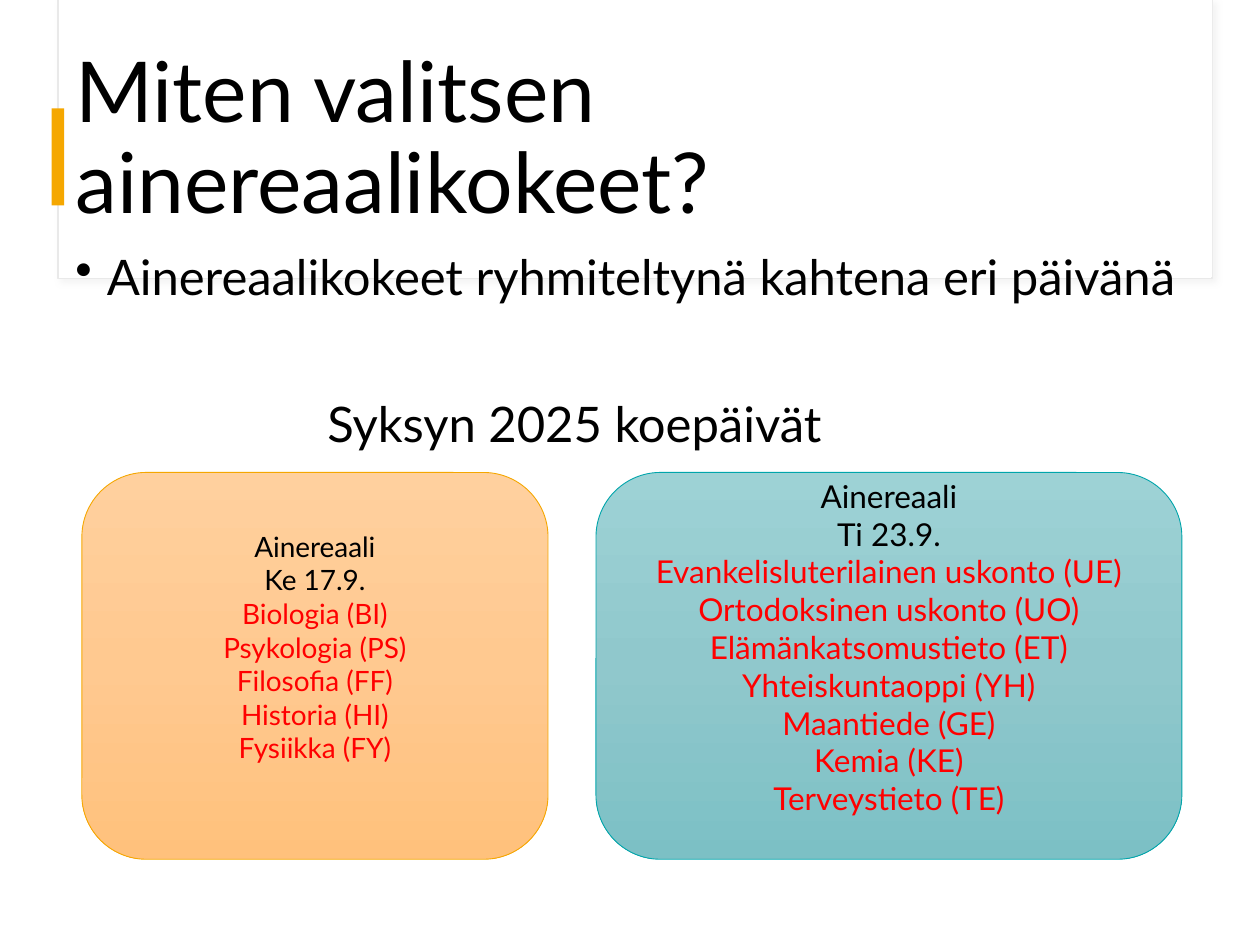
import copy
import pptx
import pptx.util
import pptx.dml.color
import pptx.enum.shapes
import pptx.enum.text
import pptx.oxml
import pptx.oxml.ns
from dataclasses import dataclass

Inches = pptx.util.Inches
Pt = pptx.util.Pt
qn = pptx.oxml.ns.qn
Kind = pptx.enum.shapes.MSO_SHAPE
Align = pptx.enum.text.PP_ALIGN
Anchor = pptx.enum.text.MSO_ANCHOR


@dataclass
class Theme:
    font: str = "Lato"
    black: str = "000000"
    white: str = "FFFFFF"
    red: str = "FF0000"
    edge: str = "E9E9E9"
    shade: str = "D9D9D9"
    gold: str = "F5A700"
    teal: str = "00A5AB"
    warm: tuple = ("FFD09E", "FFC990", "FFC17C")
    cool: tuple = ("9DD2D5", "90C8CC", "7CC0C5")
    title: int = 48
    body: int = 28
    large: int = 18
    small: int = 16


def rgb(code):
    return pptx.dml.color.RGBColor.from_string(code)


class Page:
    def __init__(self, slide, theme):
        self.slide = slide
        self.theme = theme

    def shape(self, kind, at, line=None, width=0.75):
        item = self.slide.shapes.add_shape(kind, *map(Inches, at))
        item.shadow.inherit = False
        if line:
            item.line.color.rgb = rgb(line)
            item.line.width = Pt(width)
        else:
            item.line.fill.background()
        return item

    def rect(self, at, fill, line=None):
        item = self.shape(Kind.RECTANGLE, at, line)
        item.fill.solid()
        item.fill.fore_color.rgb = rgb(fill)
        return item

    def shadow(self, item):
        effects = item._element.spPr.find(qn("a:effectLst"))
        effects.append(pptx.oxml.parse_xml(
            f'<a:outerShdw {pptx.oxml.ns.nsdecls("a")} blurRad="{Pt(4)}" '
            f'dist="{Pt(3)}" dir="2700000" rotWithShape="0">'
            f'<a:srgbClr val="{self.theme.shade}"><a:alpha val="30000"/>'
            '</a:srgbClr></a:outerShdw>'))

    def frame(self, at, anchor=Anchor.TOP):
        frame = self.slide.shapes.add_textbox(*map(Inches, at)).text_frame
        frame.word_wrap = True
        frame.vertical_anchor = anchor
        return frame

    def label(self, par, text, size, color=None, space=None):
        par.text = text
        par.font.name = self.theme.font
        par.font.size = Pt(size)
        par.font.color.rgb = rgb(color or self.theme.black)
        if space:
            par.line_spacing = space

    def indent(self, par, left, first=0, mark=None):
        props = par._p.get_or_add_pPr()
        props.set("marL", str(Inches(left)))
        props.set("indent", str(Inches(first)))
        if mark:
            bullet = pptx.oxml.parse_xml(
                f'<a:buChar {pptx.oxml.ns.nsdecls("a")} char="{mark}"/>')
            props.insert_element_before(bullet, "a:tabLst", "a:defRPr", "a:extLst")

    def card(self, at, shades, line, size, head, exams):
        item = self.shape(Kind.ROUNDED_RECTANGLE, at, line, 0.5)
        # Three-stop gradient, running downwards
        item.fill.gradient()
        item.fill.gradient_angle = 270
        stops = item._element.spPr.find(".//" + qn("a:gsLst"))
        stops.insert(1, copy.deepcopy(stops[0]))
        for i, (stop, shade) in enumerate(zip(item.fill.gradient_stops, shades)):
            stop.position = i / 2
            stop.color.rgb = rgb(shade)
        # Heading lines in black, exams in red
        frame = item.text_frame
        frame.word_wrap = True
        frame.vertical_anchor = Anchor.MIDDLE
        frame.margin_bottom = Inches(0.35)
        for i, text in enumerate(head + exams):
            par = frame.add_paragraph() if i else frame.paragraphs[0]
            color = self.theme.black if i < len(head) else self.theme.red
            self.label(par, text, size, color)
            par.alignment = Align.CENTER


def main():
    deck = pptx.Presentation()
    deck.slide_width, deck.slide_height = Inches(10), Inches(7.5)
    theme = Theme()
    page = Page(deck.slides.add_slide(deck.slide_layouts[6]), theme)

    # Header panel and accent bar
    page.shadow(page.rect((0.46, 0, 9.16, 2.21), theme.white, theme.edge))
    page.rect((0.47, 0, 9.15, 2.2), theme.white)
    page.rect((0.41, 0.86, 0.1, 0.77), theme.gold)

    # Title
    title = page.frame((0.5, 0.77, 9, 0.7), Anchor.MIDDLE)
    page.label(title.paragraphs[0], "Miten valitsen ainereaalikokeet?",
               theme.title, space=0.9)

    # Body
    body = page.frame((0.5, 1.86, 9, 5.06))
    lead = body.paragraphs[0]
    page.label(lead, "Ainereaalikokeet ryhmiteltynä kahtena eri päivänä",
               theme.body, space=1.1)
    page.indent(lead, 0.25, -0.25, "•")
    dates = body.add_paragraph()
    page.label(dates, "Syksyn 2025 koepäivät", theme.body, space=1.1)
    page.indent(dates, 2)
    dates.space_before = Pt(47)

    # Exam days
    top, height = 3.75, 3.07
    page.card((4.73, top, 4.65, height), theme.cool, theme.teal, theme.large,
              ["Ainereaali", "Ti 23.9."],
              ["Evankelisluterilainen uskonto (UE)", "Ortodoksinen uskonto (UO)",
               "Elämänkatsomustieto (ET)", "Yhteiskuntaoppi (YH)\vMaantiede (GE)",
               "Kemia (KE)", "Terveystieto (TE)"])
    page.card((0.65, top, 3.7, height), theme.warm, theme.gold, theme.small,
              ["Ainereaali", "Ke 17.9."],
              ["Biologia (BI)", "Psykologia (PS)", "Filosofia (FF)",
               "Historia (HI)", "Fysiikka (FY)"])

    deck.save("out.pptx")


if __name__ == "__main__":
    main()
